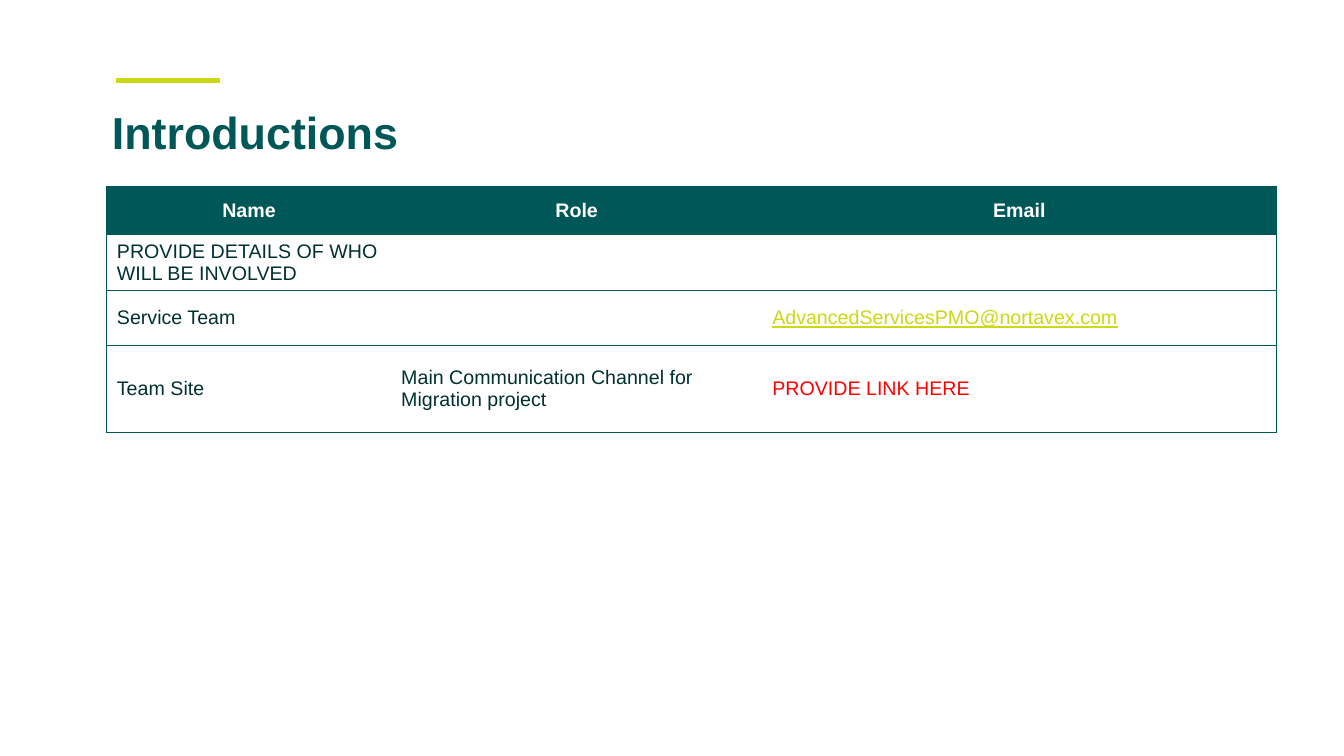
from pptx import Presentation
from pptx.dml.color import RGBColor
from pptx.enum.shapes import MSO_CONNECTOR
from pptx.enum.text import MSO_ANCHOR, PP_ALIGN
from pptx.oxml import parse_xml
from pptx.oxml.ns import nsdecls
from pptx.util import Inches, Pt

TEAL = RGBColor(0x00, 0x57, 0x58)
DARK = RGBColor(0x00, 0x30, 0x30)
LIME = RGBColor(0xCC, 0xD8, 0x14)
RED = RGBColor(0xFF, 0x00, 0x00)
WHITE = RGBColor(0xFF, 0xFF, 0xFF)


def style(font, **values):
    color = values.pop("color")
    for name, value in values.items():
        setattr(font, name, value)
    font.name = "Arial"
    font.color.rgb = color


def border(cell, side, shown):
    paint = f'<a:solidFill><a:srgbClr val="{TEAL}"/></a:solidFill>' if shown else "<a:noFill/>"
    cell._tc.get_or_add_tcPr().append(
        parse_xml(f'<a:ln{side} {nsdecls("a")} w="12700">{paint}</a:ln{side}>'))


deck = Presentation()
deck.slide_width = Inches(13.33)
deck.slide_height = Inches(7.5)
slide = deck.slides.add_slide(deck.slide_layouts[5])
slide.background.fill.solid()
slide.background.fill.fore_color.rgb = WHITE

# Accent line above the title
accent = slide.shapes.add_connector(
    MSO_CONNECTOR.STRAIGHT, Inches(1.15), Inches(0.8), Inches(2.18), Inches(0.8))
accent.line.color.rgb = LIME
accent.line.width = Pt(4)
accent._element.spPr.append(parse_xml(f'<a:effectLst {nsdecls("a")}/>'))

# Title
title = slide.shapes.title
title.left, title.top = Inches(1.01), Inches(0.61)
title.width, title.height = Inches(11.5), Inches(1.45)
title.text_frame.text = "Introductions"
title.text_frame.vertical_anchor = MSO_ANCHOR.MIDDLE
head = title.text_frame.paragraphs[0]
head.alignment = PP_ALIGN.LEFT
head.line_spacing = 0.9
style(head.font, size=Pt(32), bold=True, color=TEAL)

# Contact table
mail = "AdvancedServicesPMO@nortavex.com"
link = "PROVIDE LINK HERE"
rows = [
    ("Name", "Role", "Email"),
    ("PROVIDE DETAILS OF WHO WILL BE INVOLVED", "", ""),
    ("Service Team", "", mail),
    ("Team Site", "Main Communication Channel for Migration project", link),
]
widths = [2.82, 3.68, 5.1]
heights = [0.48, 0.55, 0.55, 0.86]
tints = {mail: LIME, link: RED}

table = slide.shapes.add_table(
    len(rows), len(widths), Inches(1.06), Inches(1.85),
    Inches(sum(widths)), Inches(sum(heights))).table
table.first_row = False
table.horz_banding = False
for col, width in zip(table.columns, widths):
    col.width = Inches(width)
for row, height in zip(table.rows, heights):
    row.height = Inches(height)

for r, row in enumerate(rows):
    for c, text in enumerate(row):
        cell = table.cell(r, c)
        # Outer frame and row rules only, no inner vertical lines
        border(cell, "L", c == 0)
        border(cell, "R", c == len(row) - 1)
        border(cell, "T", True)
        border(cell, "B", True)
        cell.fill.solid()
        cell.fill.fore_color.rgb = TEAL if r == 0 else WHITE
        cell.vertical_anchor = MSO_ANCHOR.MIDDLE
        cell.text = text
        para = cell.text_frame.paragraphs[0]
        para.alignment = PP_ALIGN.CENTER if r == 0 else PP_ALIGN.LEFT
        for run in para.runs:
            style(run.font, size=Pt(14), bold=r == 0, underline=text == mail,
                  color=WHITE if r == 0 else tints.get(text, DARK))

deck.save("out.pptx")
